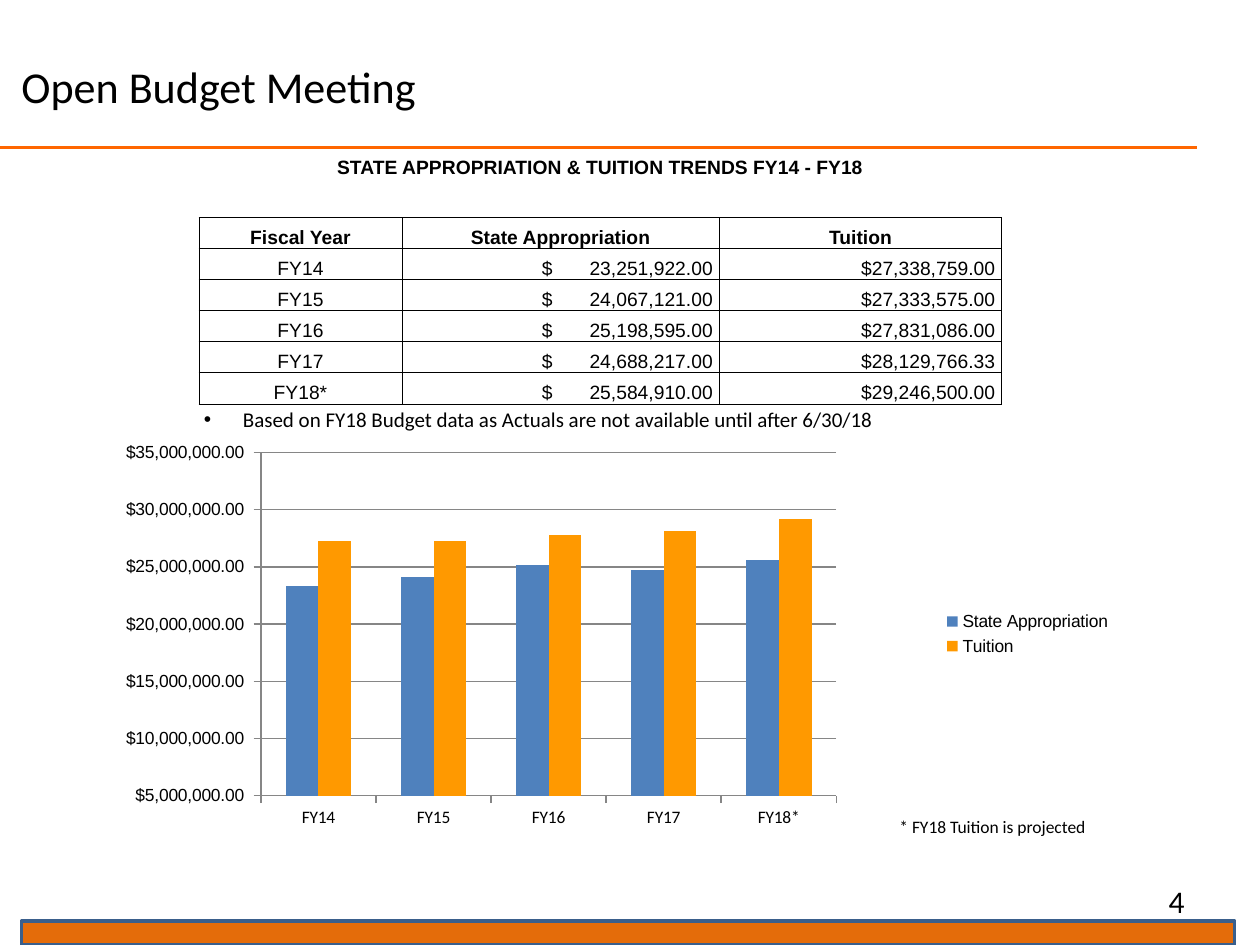
from lxml import etree
from pptx import Presentation
from pptx import oxml
from pptx.chart import data
from pptx.dml import color
from pptx.enum import chart as charts, shapes, text
from pptx.oxml import ns
from pptx.util import Inches, Pt

BLACK = "000000"
ORANGE = "FF6600"
GRAY = "868686"
ALIGN = text.PP_ALIGN
ANCHOR = text.MSO_ANCHOR


def rgb(value):
    return color.RGBColor.from_string(value)


def xml_child(parent, tag, **attributes):
    return etree.SubElement(parent, ns.qn(tag), attributes)


class SlideBuilder:
    body_font = "Calibri"
    table_font = "Arial"
    no_table_style = "{2D5ABB26-0587-4C30-8999-92F81FD0307C}"

    def __init__(self, deck):
        self.slide = deck.slides.add_slide(deck.slide_layouts[5])
        self.shapes = self.slide.shapes

    def format_font(self, font, size, name=None, bold=False):
        font.size, font.bold = Pt(size), bold
        font.name = name or self.body_font
        font.color.rgb = rgb(BLACK)

    def add_words(self, paragraph, words, size, align=ALIGN.LEFT, name=None, bold=False):
        paragraph.alignment = align
        run = paragraph.add_run()
        run.text = words
        self.format_font(run.font, size, name, bold)

    def title(self, words, left, top, width, height):
        title = self.shapes.title
        title.left, title.top = Inches(left), Inches(top)
        title.width, title.height = Inches(width), Inches(height)
        frame = title.text_frame
        frame.auto_size = text.MSO_AUTO_SIZE.NONE
        frame.vertical_anchor = ANCHOR.TOP
        frame.margin_left = Inches(0.17)
        self.add_words(frame.paragraphs[0], words, 25.2)

    def textbox(self, words, size, left, top, width, height,
                align=ALIGN.LEFT, anchor=ANCHOR.TOP, bullet=False):
        frame = self.shapes.add_textbox(
            Inches(left), Inches(top), Inches(width), Inches(height)).text_frame
        frame.word_wrap = True
        frame.vertical_anchor = anchor
        paragraph = frame.paragraphs[0]
        if bullet:
            properties = paragraph._p.get_or_add_pPr()
            properties.set("marL", str(Inches(0.31)))
            properties.set("indent", str(-Inches(0.31)))
            xml_child(properties, "a:buFont", typeface="Arial")
            xml_child(properties, "a:buChar", char="•")
        self.add_words(paragraph, words, size, align)

    def rule(self, left, right, y):
        rule = self.shapes.add_connector(
            shapes.MSO_CONNECTOR.STRAIGHT, Inches(left), Inches(y), Inches(right), Inches(y))
        rule.line.color.rgb = rgb(ORANGE)
        rule.line.width = Pt(1.5)
        xml_child(rule._element.spPr, "a:effectLst")

    def bar(self, left, top, width, height):
        bar = self.shapes.add_shape(
            shapes.MSO_SHAPE.RECTANGLE, Inches(left), Inches(top), Inches(width), Inches(height))
        bar.shadow.inherit = False
        bar.fill.solid()
        bar.fill.fore_color.rgb = rgb("E46C0A")
        bar.line.color.rgb = rgb("3A5F8C")
        bar.line.width = Pt(2)

    def border(self, cell):
        properties = cell._tc.get_or_add_tcPr()
        for position, side in enumerate(("a:lnL", "a:lnR", "a:lnT", "a:lnB")):
            edge = xml_child(properties, side, w=str(Pt(0.5)))
            xml_child(xml_child(edge, "a:solidFill"), "a:srgbClr", val=BLACK)
            properties.insert(position, edge)

    def table_cell(self, cell, words, align=ALIGN.CENTER, bold=False):
        cell.vertical_anchor = ANCHOR.BOTTOM
        paragraph = cell.text_frame.paragraphs[0]
        if "\t" in words:
            cell.margin_left = Inches(1.11)
            tabs = xml_child(paragraph._p.get_or_add_pPr(), "a:tabLst")
            xml_child(tabs, "a:tab", pos=str(Inches(1.36)), algn="r")
        elif align == ALIGN.RIGHT:
            cell.margin_right = Inches(0.05)
        self.add_words(paragraph, words, 11, align, self.table_font, bold)

    def table(self, heading, header, records, left, top, widths):
        row_count = len(records) + 3
        table = self.shapes.add_table(
            row_count, len(widths), Inches(left), Inches(top),
            Inches(sum(widths)), Inches(2.04)).table
        table.first_row = table.horz_banding = False
        table._tbl.tblPr.find(ns.qn("a:tableStyleId")).text = self.no_table_style
        for column, width in zip(table.columns, widths):
            column.width = Inches(width)
        for row in table.rows:
            row.height = Inches(1.48 / 6)
        table.rows[1].height = Inches(0.3)
        for cell in table.iter_cells():
            cell.fill.background()
            cell.margin_left = cell.margin_right = cell.margin_top = Inches(0.01)
            cell.margin_bottom = 0
        table.cell(0, 0).merge(table.cell(0, len(widths) - 1))
        self.table_cell(table.cell(0, 0), heading, bold=True)
        for column, label in enumerate(header):
            self.table_cell(table.cell(2, column), label, bold=True)
        for row, (year, appropriation, tuition) in enumerate(records, 3):
            self.table_cell(table.cell(row, 0), year)
            self.table_cell(table.cell(row, 1), f"$\t{appropriation}", ALIGN.LEFT)
            self.table_cell(table.cell(row, 2), f"${tuition}", ALIGN.RIGHT)
        for row in range(2, row_count):
            for column in range(len(widths)):
                self.border(table.cell(row, column))

    def place_plot(self, chart, **fractions):
        area = chart._chartSpace.chart.plotArea
        for existing in area.findall(ns.qn("c:layout")):
            area.remove(existing)
        settings = dict(layoutTarget="inner", xMode="edge", yMode="edge", **fractions)
        entries = "".join(f'<c:{key} val="{value}"/>' for key, value in settings.items())
        area.insert(0, oxml.parse_xml(
            f'<c:layout {ns.nsdecls("c")}><c:manualLayout>{entries}</c:manualLayout></c:layout>'))

    def column_chart(self, years, series, left, top, width, height):
        chart_data = data.CategoryChartData()
        chart_data.categories = years
        for name, values, _ in series:
            chart_data.add_series(name, values)
        chart = self.shapes.add_chart(
            charts.XL_CHART_TYPE.COLUMN_CLUSTERED, Inches(left), Inches(top),
            Inches(width), Inches(height), chart_data).chart
        self.format_font(chart.font, 10)
        chart.has_title = False
        plot = chart.plots[0]
        plot.vary_by_categories = False
        plot.gap_width, plot.overlap = 150, 0
        for bars, (_, _, fill) in zip(plot.series, series):
            bars.invert_if_negative = False
            bars.format.fill.solid()
            bars.format.fill.fore_color.rgb = rgb(fill)
        amounts = chart.value_axis
        amounts.minimum_scale, amounts.maximum_scale = 5_000_000, 35_000_000
        amounts.major_unit = 5_000_000
        amounts.tick_labels.number_format = r'"$"#,##0.00_);[Red]\("$"#,##0.00\)'
        amounts.tick_labels.number_format_is_linked = False
        self.format_font(amounts.tick_labels.font, 10, self.table_font)
        for line in (amounts.major_gridlines.format.line, amounts.format.line,
                     chart.category_axis.format.line):
            line.color.rgb = rgb(GRAY)
            line.width = Pt(0.75)
        for axis in (amounts, chart.category_axis):
            axis.major_tick_mark = charts.XL_TICK_MARK.OUTSIDE
        chart.has_legend = True
        chart.legend.position = charts.XL_LEGEND_POSITION.RIGHT
        chart.legend.include_in_layout = False
        self.format_font(chart.legend.font, 10, self.table_font)
        self.place_plot(chart, x=0.13, y=0.03, w=0.58, h=0.89)


def main():
    deck = Presentation()
    deck.slide_width, deck.slide_height = Inches(10), Inches(7.5)
    budget = SlideBuilder(deck)
    header = ("Fiscal Year", "State Appropriation", "Tuition")
    records = [
        ("FY14", "23,251,922.00", "27,338,759.00"),
        ("FY15", "24,067,121.00", "27,333,575.00"),
        ("FY16", "25,198,595.00", "27,831,086.00"),
        ("FY17", "24,688,217.00", "28,129,766.33"),
        ("FY18*", "25,584,910.00", "29,246,500.00"),
    ]
    years = [record[0] for record in records]
    series = [
        (header[1], (23_300_000, 24_100_000, 25_200_000, 24_700_000, 25_600_000), "4F81BD"),
        (header[2], (27_300_000, 27_300_000, 27_800_000, 28_100_000, 29_200_000), "FF9900"),
    ]
    budget.rule(0, 9.5, 1.17)
    budget.textbox("4", 18, 7.17, 6.95, 2.33, 0.4, ALIGN.RIGHT, ANCHOR.MIDDLE)
    budget.title("Open Budget Meeting", 0, 0.42, 6.08, 0.5)
    budget.bar(0.17, 7.31, 9.63, 0.19)
    budget.textbox("* FY18 Tuition is projected", 10, 7.04, 6.43, 2.37, 0.27)
    budget.table("STATE APPROPRIATION & TUITION TRENDS FY14 - FY18",
                 header, records, 1.58, 1.17, (1.61, 2.52, 2.24))
    budget.column_chart(years, series, 1, 3.5, 7.92, 3.07)
    budget.textbox("Based on FY18 Budget data as Actuals are not available until after 6/30/18",
                   12, 1.52, 3.18, 6.44, 0.61, bullet=True)
    deck.save("out.pptx")


if __name__ == "__main__":
    main()
